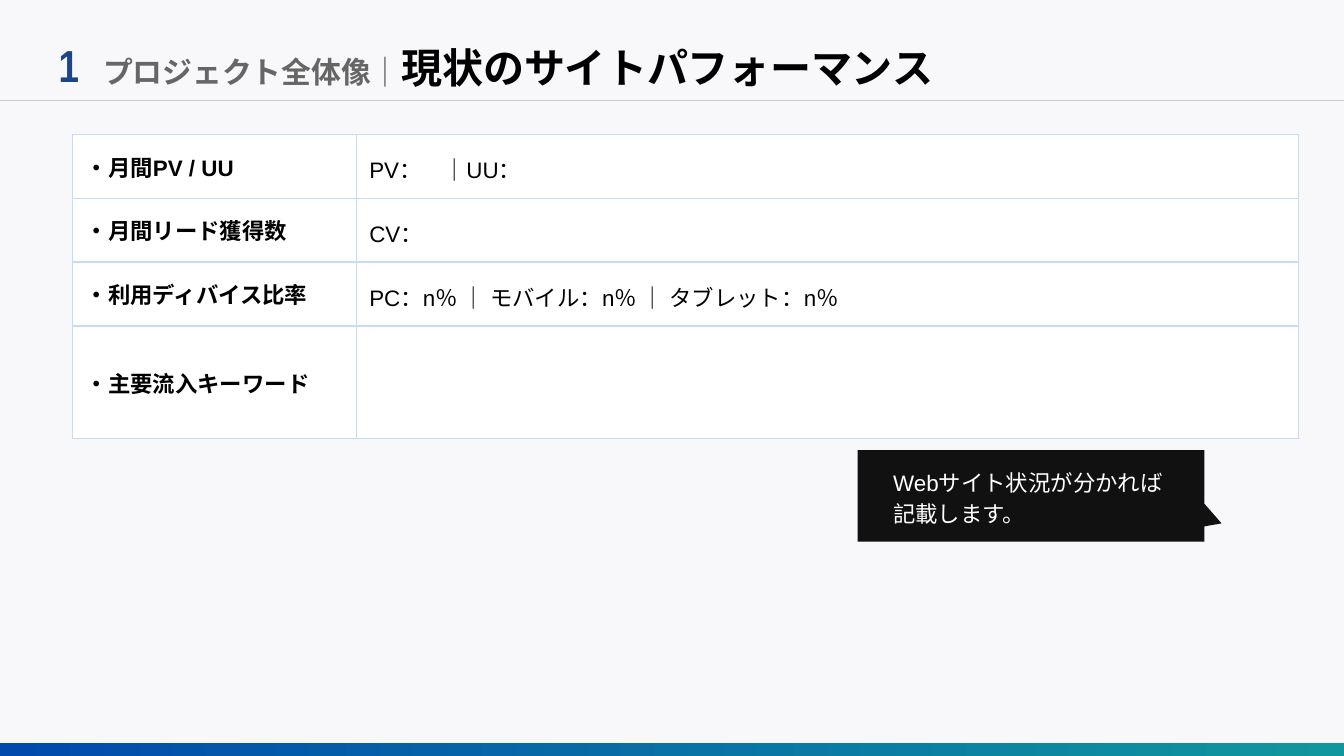
from pptx import Presentation, util as u
from pptx.dml.color import RGBColor
from pptx.enum import shapes as sh, text as tx
from pptx.oxml.ns import qn
from lxml import etree

INSET = u.Cm(0.25)
ROWS = [
    ("・月間PV / UU", "PV：　｜UU：", 1.07),
    ("・月間リード獲得数", "CV：", 1.07),
    ("・利用ディバイス比率", "PC：n％ ｜ モバイル：n％ ｜ タブレット：n％", 0.94),
    ("・主要流入キーワード", "", 2.13),
]


def color(code):
    """Turn a hex string into a colour."""
    return RGBColor.from_string(code)


def style(font, size, code, bold=False, name="Arial"):
    """Set the look of a font."""
    font.size, font.bold, font.name = u.Pt(size), bold, name
    font.color.rgb = color(code)


def place(shape, left, top, width, height):
    """Move a shape to a box given in centimetres."""
    shape.left, shape.top = u.Cm(left), u.Cm(top)
    shape.width, shape.height = u.Cm(width), u.Cm(height)


def setup(shape, anchor):
    """Prepare the text frame of a shape and return it."""
    frame = shape.text_frame
    frame.word_wrap = True
    frame.auto_size = tx.MSO_AUTO_SIZE.NONE
    frame.vertical_anchor = anchor
    frame.margin_left = frame.margin_right = INSET
    frame.margin_top = frame.margin_bottom = INSET
    return frame


def edge(cell, code, width):
    """Draw the four borders of a cell."""
    props = cell._tc.get_or_add_tcPr()
    for spot, side in enumerate(("a:lnL", "a:lnR", "a:lnT", "a:lnB")):
        line = etree.Element(qn(side), w=str(u.Pt(width)))
        fill = etree.SubElement(line, qn("a:solidFill"))
        etree.SubElement(fill, qn("a:srgbClr"), val=code)
        props.insert(spot, line)


def header(slide, left, top, width, height):
    """Place the section number, the title and the rule below them."""
    number = slide.shapes.add_textbox(0, 0, 0, 0)
    place(number, left, top, 1.07, height)
    para = setup(number, tx.MSO_ANCHOR.BOTTOM).paragraphs[0]
    para.text = "1"
    style(para.font, 24, "1C4587", True, "Arial Narrow")

    title = slide.shapes.title
    place(title, left + 0.84, top, width - 0.84, height)
    para = setup(title, tx.MSO_ANCHOR.BOTTOM).paragraphs[0]
    para.alignment = tx.PP_ALIGN.LEFT
    for words, size, code in (
        ("プロジェクト全体像｜", 16, "666666"),
        ("現状のサイトパフォーマンス", 22, "000000"),
    ):
        run = para.add_run()
        run.text = words
        style(run.font, size, code, True)


def frame(slide, width, height):
    """Place the header rule and the gradient foot bar."""
    rule = slide.shapes.add_connector(
        sh.MSO_CONNECTOR.STRAIGHT, 0, u.Cm(1.9), u.Cm(width), u.Cm(1.9))
    rule.line.color.rgb = color("CCCCCC")
    rule.line.width = u.Pt(0.75)
    etree.SubElement(rule._element.spPr, qn("a:effectLst"))

    bar = slide.shapes.add_shape(sh.MSO_SHAPE.RECTANGLE, 0, 0, 0, 0)
    place(bar, 0, height - 0.24, width, 0.24)
    bar.shadow.inherit = False
    bar.line.fill.background()
    bar.fill.gradient()
    bar.fill.gradient_angle = 180
    for stop, code in zip(bar.fill.gradient_stops, ("10979D", "004AAD")):
        stop.color.rgb = color(code)


def metrics(slide, left, top, width):
    """Place the table of site figures."""
    height = sum(row[2] for row in ROWS)
    table = slide.shapes.add_table(
        len(ROWS), 2, u.Cm(left), u.Cm(top), u.Cm(width), u.Cm(height)).table
    table.first_row = table.horz_banding = False
    first = 5.36
    table.columns[0].width = u.Cm(first)
    table.columns[1].width = u.Cm(width - first)
    for row, (label, value, tall) in zip(table.rows, ROWS):
        row.height = u.Cm(tall)
        for cell, words, bold in zip(row.cells, (label, value), (True, False)):
            cell.fill.solid()
            cell.fill.fore_color.rgb = color("FFFFFF")
            edge(cell, "C9DAF8", 0.75)
            cell.vertical_anchor = tx.MSO_ANCHOR.MIDDLE
            cell.margin_left = cell.margin_right = INSET
            cell.margin_top = cell.margin_bottom = INSET
            para = cell.text_frame.paragraphs[0]
            para.text = words
            if not bold:
                para.line_spacing = 1.15
            style(para.font, 12, "000000", bold)


def callout(slide, left, top, width, height):
    """Place the dark speech box with its hint."""
    note = slide.shapes.add_shape(
        sh.MSO_SHAPE.RECTANGULAR_CALLOUT, 0, 0, 0, 0)
    place(note, left, top, width, height)
    note.adjustments[0], note.adjustments[1] = 0.55, 0.3
    note.shadow.inherit = False
    note.fill.solid()
    note.fill.fore_color.rgb = color("111111")
    note.line.fill.background()
    body = setup(note, tx.MSO_ANCHOR.MIDDLE)
    body.text = "Webサイト状況が分かれば\n記載します。"
    for para in body.paragraphs:
        para.alignment = tx.PP_ALIGN.LEFT
        para.line_spacing = 1.15
        para._p.get_or_add_pPr().set("marL", str(u.Cm(0.42)))
        style(para.font, 12, "FFFFFF")


def main():
    """Build the slide and save it."""
    deck = Presentation()
    deck.slide_width, deck.slide_height = u.Cm(25.4), u.Cm(14.29)
    slide = deck.slides.add_slide(deck.slide_layouts[5])
    slide.background.fill.solid()
    slide.background.fill.fore_color.rgb = color("F8F8FA")
    frame(slide, 25.4, 14.29)
    metrics(slide, 1.37, 2.54, 23.17)
    callout(slide, 16.21, 8.51, 6.55, 1.73)
    header(slide, 0.86, 0.38, 22.35, 1.6)
    deck.save("out.pptx")


if __name__ == "__main__":
    main()
